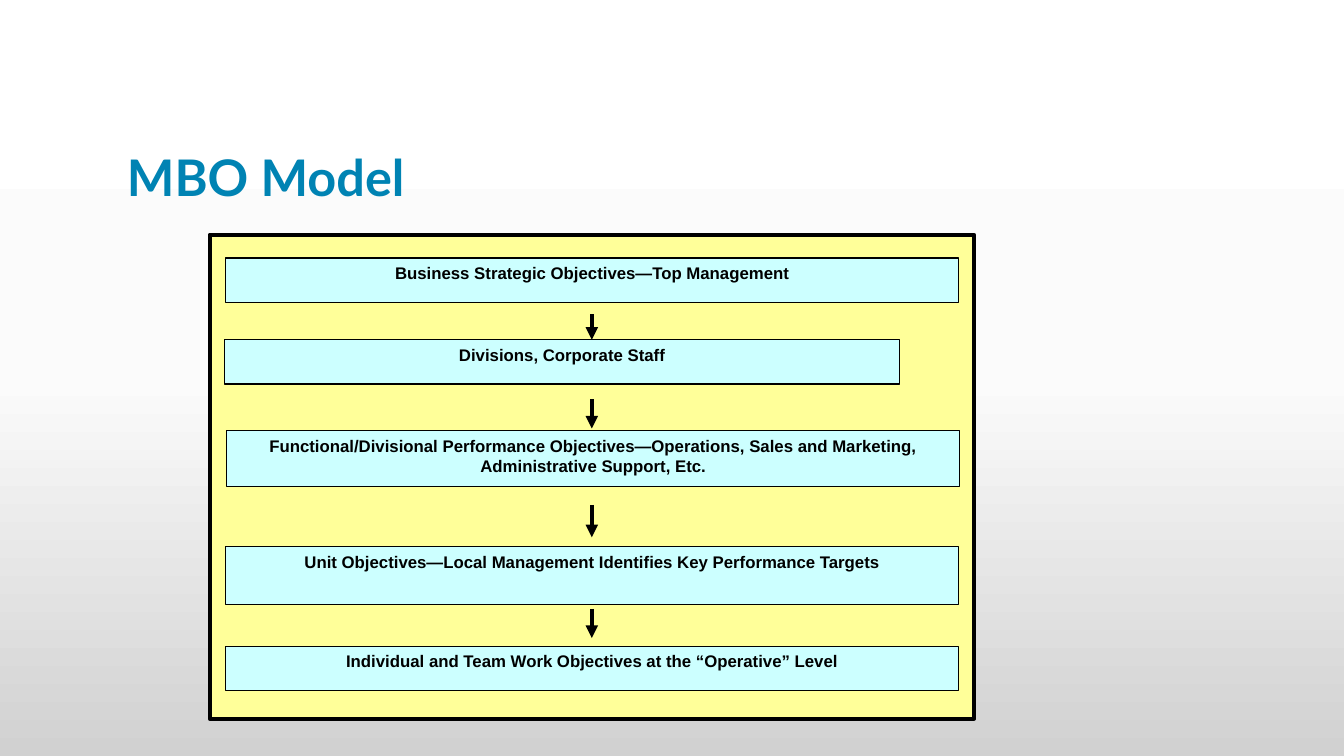
"""Builds the MBO model slide: a framed cascade of objectives joined by arrows."""
from lxml.etree import SubElement
from pptx import Presentation
from pptx.dml.color import RGBColor
from pptx.enum.shapes import MSO_CONNECTOR as Connector, MSO_SHAPE as Shape
from pptx.enum.text import MSO_ANCHOR as Anchor, PP_ALIGN as Align
from pptx.oxml.ns import qn
from pptx.util import Pt

EMU_PER_PX = 9144
BLACK, BLUE, YELLOW, CYAN = "000000", "0083B3", "FFFF99", "CCFFFF"

LEVELS = [
    ((224, 256, 727, 44), "Business Strategic Objectives—Top Management"),
    ((223, 337, 669, 44), "Divisions, Corporate Staff"),
    ((225, 427, 727, 56), "Functional/Divisional Performance Objectives—Operations, "
                          "Sales and Marketing, Administrative Support, Etc."),
    ((224, 542, 727, 58), "Unit Objectives—Local Management Identifies Key Performance Targets"),
    ((224, 641, 727, 44), "Individual and Team Work Objectives at the “Operative” Level"),
]
ARROW_X = 587
ARROW_SPANS = [(312, 337), (396, 425), (501, 533), (604, 633)]


def px(*lengths):
    return [length * EMU_PER_PX for length in lengths]


def color(code):
    return RGBColor.from_string(code)


class Canvas:
    """Holds the text style and the current slide, and draws its elements."""

    def __init__(self, page, font="Arial", size=12):
        self.page, self.font, self.size = page, font, size

    def background(self, stops, angle):
        fill = self.page.background.fill
        fill.gradient()
        fill.gradient_angle = angle
        stop_list = self.page.element.find(".//" + qn("a:gsLst"))
        for old_stop in list(stop_list):
            stop_list.remove(old_stop)
        for percent, code in stops:
            stop = SubElement(stop_list, qn("a:gs"), pos=str(percent * 1000))
            SubElement(stop, qn("a:srgbClr"), val=code)

    def add_span(self, para, text, ink, font=None, size=None):
        span = para.add_run()
        span.text = text
        span.font.name = font or self.font
        span.font.size = Pt(size or self.size)
        span.font.bold = True
        span.font.color.rgb = color(ink)

    def title(self, bounds, text):
        frame = self.page.shapes.add_textbox(*px(*bounds)).text_frame
        frame.word_wrap = True
        frame.vertical_anchor = Anchor.BOTTOM
        para = frame.paragraphs[0]
        para.line_spacing = 0.8
        self.add_span(para, text, BLUE, "Lato", 36)

    def box(self, bounds, fill, weight, text=None):
        box = self.page.shapes.add_shape(Shape.RECTANGLE, *px(*bounds))
        box.shadow.inherit = False
        box.fill.solid()
        box.fill.fore_color.rgb = color(fill)
        box.line.color.rgb = color(BLACK)
        box.line.width = Pt(weight)
        if text:
            frame = box.text_frame
            frame.word_wrap = True
            frame.vertical_anchor = Anchor.TOP
            para = frame.paragraphs[0]
            para.alignment = Align.CENTER
            self.add_span(para, text, BLACK)

    def arrow(self, x, top, bottom):
        arrow = self.page.shapes.add_connector(Connector.STRAIGHT, *px(x, top, x, bottom))
        arrow.line.color.rgb = color(BLACK)
        arrow.line.width = Pt(3)
        properties = arrow.element.spPr
        SubElement(properties.find(qn("a:ln")), qn("a:tailEnd"), type="triangle")
        SubElement(properties, qn("a:effectLst"))


def main():
    deck = Presentation()
    deck.slide_width, deck.slide_height = px(1333, 750)
    canvas = Canvas(deck.slides.add_slide(deck.slide_layouts[6]))
    canvas.background([(0, "FFFFFF"), (50, "FBFBFB"), (100, "D1D1D1")], angle=270)
    canvas.title((116, 92, 1108, 117), "MBO Model")
    canvas.box((208, 233, 758, 480), YELLOW, 3)
    for bounds, text in LEVELS:
        canvas.box(bounds, CYAN, 0.75, text)
    for top, bottom in ARROW_SPANS:
        canvas.arrow(ARROW_X, top, bottom)
    deck.save("out.pptx")


if __name__ == "__main__":
    main()
